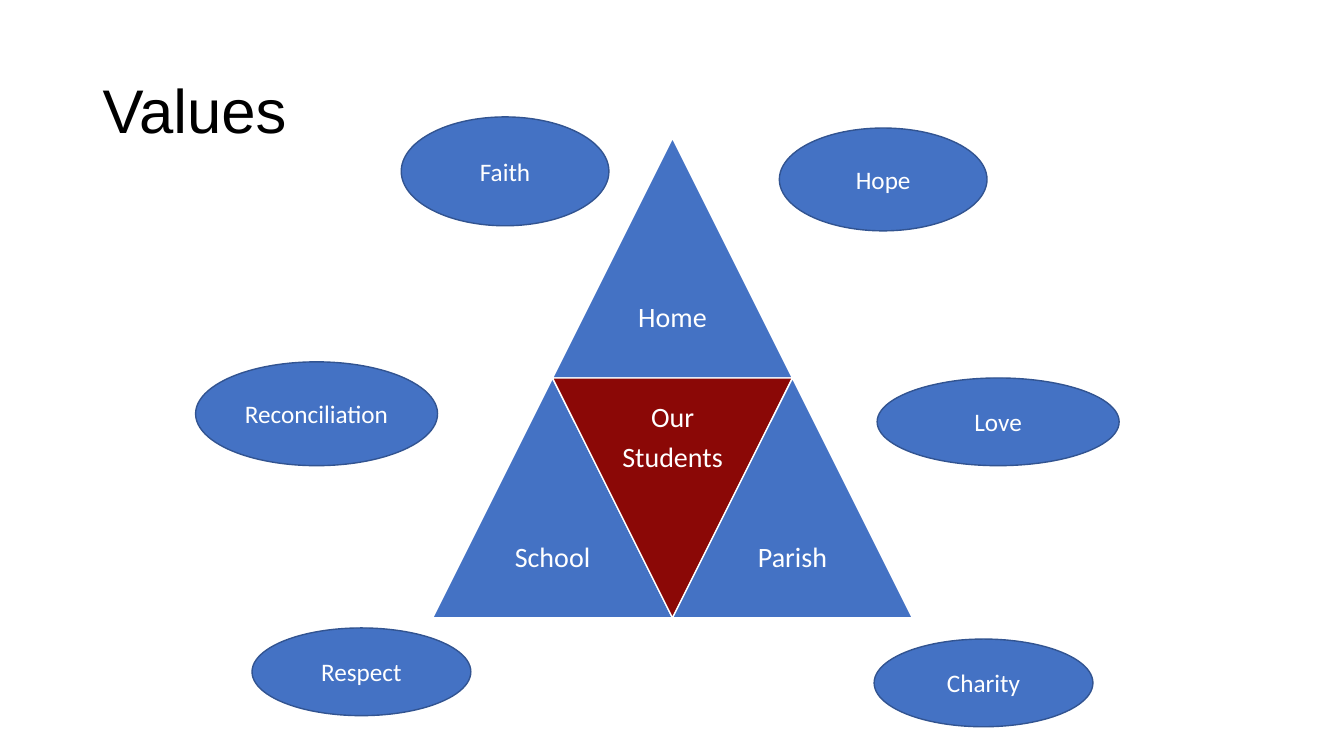
from pptx import Presentation
from pptx.dml.color import RGBColor
from pptx.enum.shapes import MSO_SHAPE as Shape
from pptx.enum.text import MSO_ANCHOR as Anchor, PP_ALIGN as Align
from pptx.util import Inches, Pt

BLUE = RGBColor(0x44, 0x72, 0xC4)
DARK_BLUE = RGBColor(0x32, 0x54, 0x91)
RED = RGBColor(0x8B, 0x08, 0x06)
WHITE = RGBColor(0xFF, 0xFF, 0xFF)
BLACK = RGBColor(0x00, 0x00, 0x00)

presentation = Presentation()
presentation.slide_width = Inches(13.33)
presentation.slide_height = Inches(7.5)
slide = presentation.slides.add_slide(presentation.slide_layouts[6])


def add_outline(kind, box, fill, line):
    shape = slide.shapes.add_shape(kind, *map(Inches, box))
    shape.shadow.inherit = False
    shape.fill.solid()
    shape.fill.fore_color.rgb = fill
    shape.line.color.rgb = line
    shape.line.width = Pt(1)
    return shape


def write_lines(shape, lines, size, font="Calibri", color=WHITE,
                align=Align.CENTER, spacing=1.0, after=0):
    frame = shape.text_frame
    frame.word_wrap = True
    frame.vertical_anchor = Anchor.MIDDLE
    for index, line in enumerate(lines):
        paragraph = frame.add_paragraph() if index else frame.paragraphs[0]
        paragraph.alignment = align
        paragraph.line_spacing = spacing
        paragraph.space_after = Pt(after)
        run = paragraph.add_run()
        run.text = line
        run.font.size = Pt(size)
        run.font.name = font
        run.font.color.rgb = color


title = slide.shapes.add_textbox(*map(Inches, (0.92, 0.4, 11.5, 1.45)))
write_lines(title, ["Values"], 44, "Arial", BLACK, Align.LEFT, 0.9)

SIDE = 2.38
HALF = SIDE / 2
PYRAMID_LEFT, PYRAMID_TOP = 4.29, 1.37

triangles = [
    (1, 0, ["Home"], BLUE, 0),
    (0, 1, ["School"], BLUE, 0),
    (1, 1, ["Our", "Students"], RED, 180),
    (2, 1, ["Parish"], BLUE, 0),
]
for column, row, lines, fill, rotation in triangles:
    left = PYRAMID_LEFT + column * HALF
    top = PYRAMID_TOP + row * SIDE
    triangle = add_outline(Shape.ISOSCELES_TRIANGLE, (left, top, SIDE, SIDE), fill, WHITE)
    triangle.rotation = rotation
    label_top = top if rotation else top + HALF
    label = slide.shapes.add_textbox(*map(Inches, (left + HALF / 2, label_top, HALF, HALF)))
    frame = label.text_frame
    frame.margin_left = frame.margin_right = Inches(0.08)
    frame.margin_top = frame.margin_bottom = Inches(0.08)
    write_lines(label, lines, 20, spacing=0.9, after=7)

values = [
    ("Faith", 3.98, 1.16, 2.06, 1.08),
    ("Respect", 2.5, 6.23, 2.17, 0.87),
    ("Reconciliation", 1.94, 3.59, 2.4, 1.03),
    ("Hope", 7.73, 1.27, 2.06, 1.02),
    ("Love", 8.7, 3.75, 2.4, 0.87),
    ("Charity", 8.67, 6.34, 2.17, 0.87),
]
for name, *box in values:
    write_lines(add_outline(Shape.OVAL, box, BLUE, DARK_BLUE), [name], 18)

presentation.save("out.pptx")
